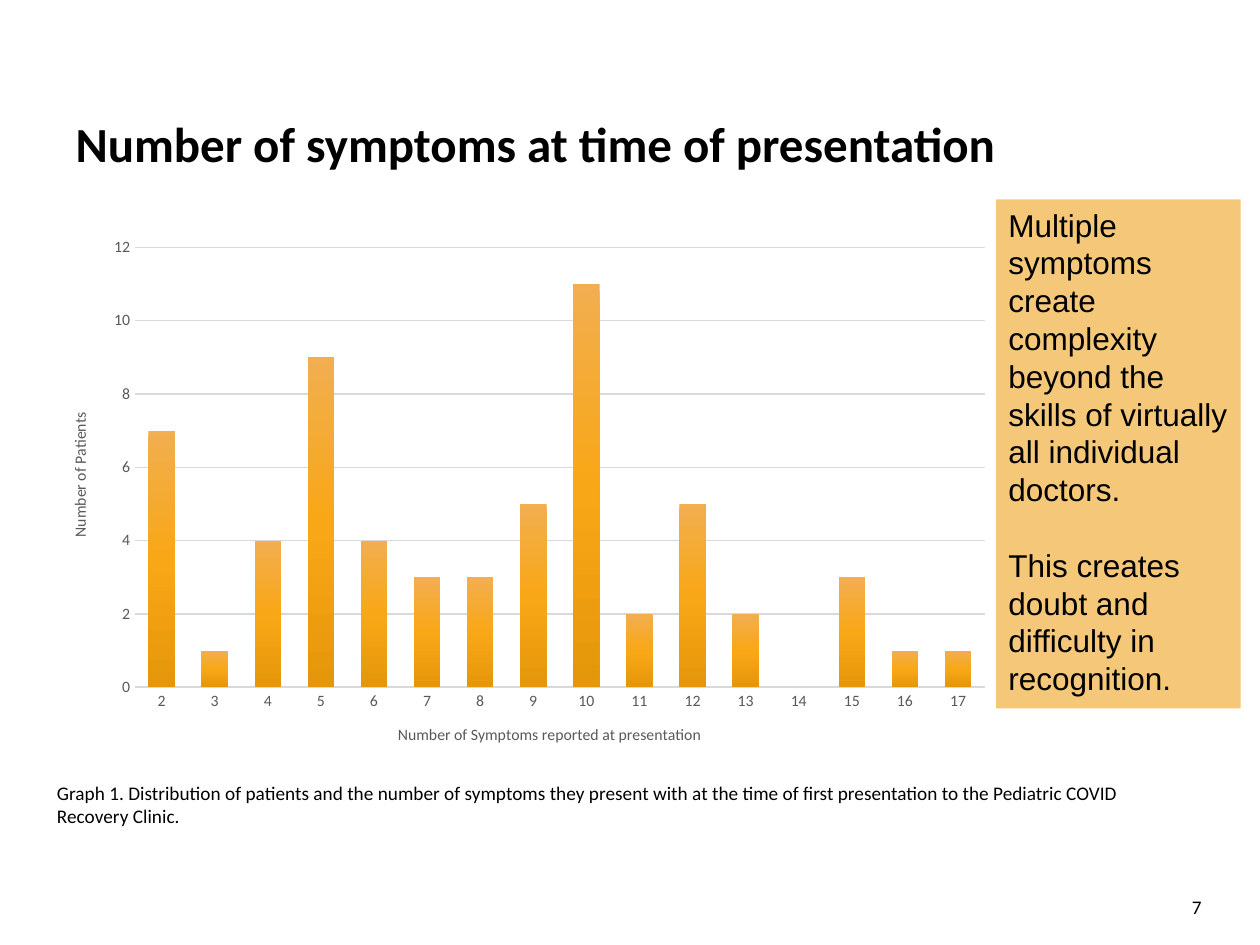
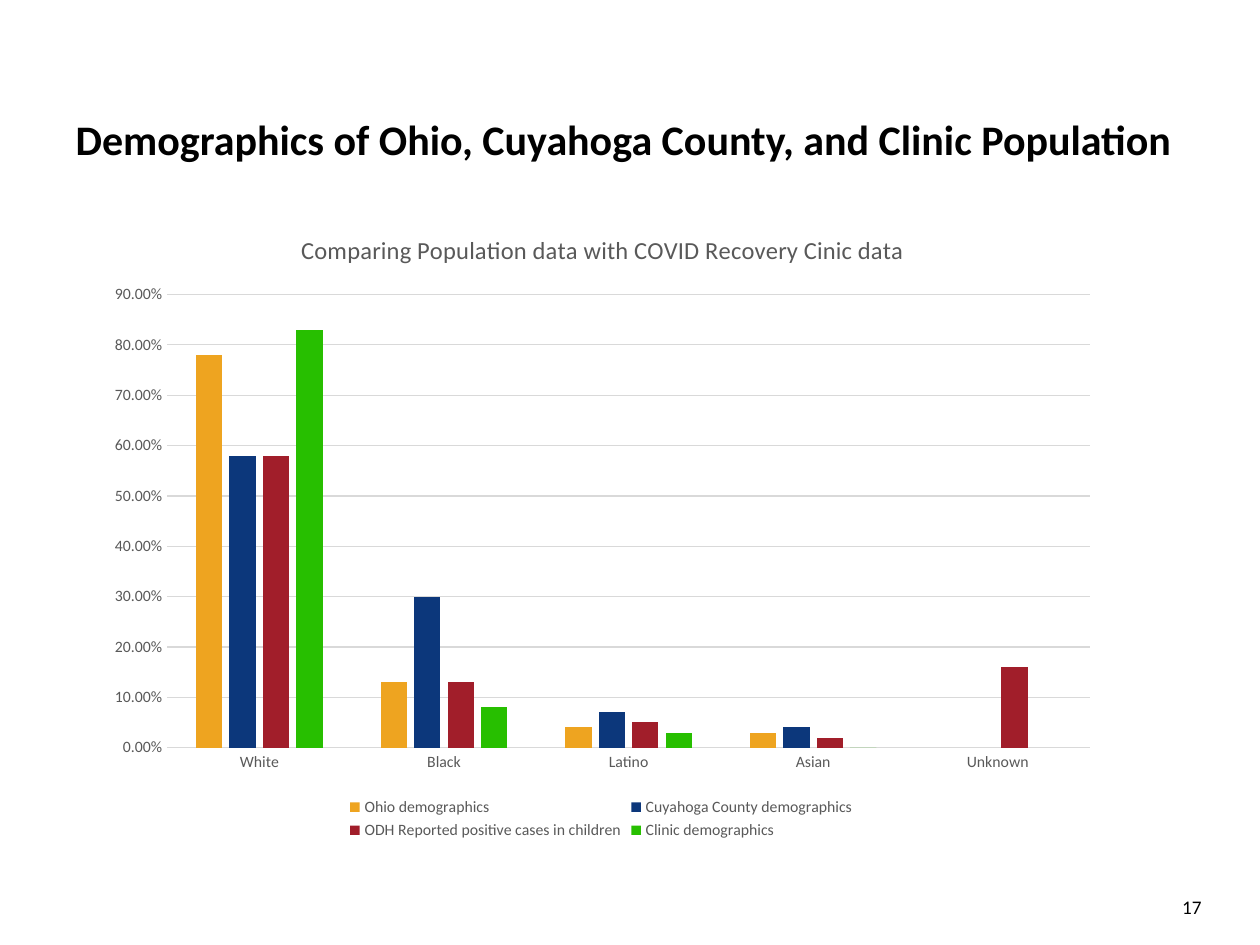
from lxml import etree
from pptx import Presentation
from pptx.chart.data import CategoryChartData
from pptx.dml.color import RGBColor
from pptx.enum.chart import XL_CHART_TYPE as ChartType, XL_LEGEND_POSITION as LegendPosition
from pptx.enum.chart import XL_TICK_MARK as TickMark
from pptx.enum.shapes import MSO_SHAPE as Shape
from pptx.enum.text import MSO_ANCHOR as Anchor, PP_ALIGN as Align
from pptx.oxml import parse_xml
from pptx.oxml.ns import nsdecls, qn
from pptx.util import Pt

COLOURS = {
    "text": "000000", "muted": "595959", "grid": "D9D9D9", "note": "F5C879",
    "ohio": "EEA420", "county": "0C377B", "reported": "A11E2A", "clinic": "27BF00",
    "bar top": "F2AE50", "bar middle": "F8A716", "bar bottom": "E5970B",
}


def set_font(font, size, colour="text", name="Calibri", bold=False):
    for key, value in {"size": Pt(size), "name": name, "bold": bold}.items():
        setattr(font, key, value)
    font.color.rgb = RGBColor.from_string(COLOURS[colour])


def place_part(element, index, chart_box, part_box):
    for old_layout in element.findall(qn("c:layout")):
        element.remove(old_layout)
    layout = parse_xml(f"<c:layout {nsdecls('c')}><c:manualLayout/></c:layout>")
    settings = {"xMode": "edge", "yMode": "edge"}
    if element.tag == qn("c:plotArea"):
        settings = {"layoutTarget": "inner", **settings}
    for key, length, whole in zip("xywh", part_box, chart_box[2:] * 2):
        settings[key] = length / whole
    for key, value in settings.items():
        etree.SubElement(layout[0], qn(f"c:{key}")).set("val", str(value))
    element.insert(index, layout)


presentation = Presentation()
presentation.slide_width, presentation.slide_height = Pt(720), Pt(540)

pages = [
    {
        "title": "Number of symptoms at time of presentation", "title size": 28, "number": "7",
        "box": (25.2, 129.6, 548, 310.3), "plot": (52, 11.8, 485.5, 251.4),
        "categories": [str(count) for count in range(2, 18)],
        "series": [("Series 1", None, [7, 1, 4, 9, 4, 3, 3, 5, 11, 2, 5, 2, 0, 3, 1, 1])],
        "bars": {"gap_width": 100, "overlap": -24, "vary_by_categories": False},
        "scale": {"minimum_scale": 0, "maximum_scale": 12, "major_unit": 2},
        "format": "General", "axis line": 1,
    },
    {
        "title": "Demographics of Ohio, Cuyahoga County, and Clinic Population",
        "title size": 24, "number": "17",
        "box": (54, 120.2, 580.3, 362.2), "plot": (41.5, 48.1, 527.4, 259),
        "categories": ["White", "Black", "Latino", "Asian", "Unknown"],
        "series": [
            ("Ohio demographics", "ohio", [0.78, 0.13, 0.04, 0.03, None]),
            ("Cuyahoga County demographics", "county", [0.58, 0.3, 0.07, 0.04, None]),
            ("ODH Reported positive cases in children", "reported",
             [0.58, 0.13, 0.05, 0.02, 0.16]),
            ("Clinic demographics", "clinic", [0.83, 0.08, 0.03, 0, None]),
        ],
        "bars": {"gap_width": 219, "overlap": -27, "vary_by_categories": False},
        "scale": {"minimum_scale": 0, "maximum_scale": 0.9, "major_unit": 0.1},
        "format": "0.00%", "axis line": 0.75,
    },
]

slides, charts = [], []
for page in pages:
    slide = presentation.slides.add_slide(presentation.slide_layouts[5])
    title = slide.shapes.title
    for key, value in {"left": 36, "top": 61.2, "width": 648, "height": 50.4}.items():
        setattr(title, key, Pt(value))
    title.text_frame.text = page["title"]
    title.text_frame.vertical_anchor = Anchor.TOP
    paragraph = title.text_frame.paragraphs[0]
    paragraph.alignment = Align.LEFT
    set_font(paragraph.font, page["title size"], bold=True)

    number = slide.shapes.add_textbox(Pt(526), Pt(508), Pt(167.8), Pt(28.8))
    number.text_frame.word_wrap = True
    number.text_frame.text = page["number"]
    paragraph = number.text_frame.paragraphs[0]
    paragraph.alignment = Align.RIGHT
    set_font(paragraph.font, 11)

    chart_data = CategoryChartData(number_format=page["format"])
    chart_data.categories = page["categories"]
    for name, colour, values in page["series"]:
        chart_data.add_series(name, values)
    chart = slide.shapes.add_chart(
        ChartType.COLUMN_CLUSTERED, *map(Pt, page["box"]), chart_data).chart
    chart.has_title = chart.has_legend = False
    set_font(chart.font, 10)
    plot = chart.plots[0]
    for key, value in page["bars"].items():
        setattr(plot, key, value)
    place_part(plot._element.getparent(), 0, page["box"], page["plot"])
    for series, (name, colour, values) in zip(plot.series, page["series"]):
        series.invert_if_negative = False
        if colour:
            series.format.fill.solid()
            series.format.fill.fore_color.rgb = RGBColor.from_string(COLOURS[colour])

    for axis in (chart.category_axis, chart.value_axis):
        axis.major_tick_mark = axis.minor_tick_mark = TickMark.NONE
        set_font(axis.tick_labels.font, 9, "muted")
    for key, value in page["scale"].items():
        setattr(chart.value_axis, key, value)
    chart.value_axis.tick_labels.number_format = page["format"]
    chart.value_axis.tick_labels.number_format_is_linked = False
    chart.value_axis.format.line.fill.background()
    for line, width in ((chart.category_axis.format.line, page["axis line"]),
                        (chart.value_axis.major_gridlines.format.line, 0.75)):
        line.color.rgb = RGBColor.from_string(COLOURS["grid"])
        line.width = Pt(width)
    slides.append(slide)
    charts.append(chart)

symptom_slide = slides[0]
symptom_chart, population_chart = charts
symptom_box, population_box = [page["box"] for page in pages]

stops = "".join(
    f'<a:gs pos="{position}"><a:srgbClr val="{COLOURS[colour]}"/></a:gs>'
    for position, colour in ((0, "bar top"), (50000, "bar middle"), (100000, "bar bottom")))
bar_properties = symptom_chart.plots[0].series[0]._element.get_or_add_spPr()
bar_properties.insert(0, parse_xml(
    f'<a:gradFill {nsdecls("a")} rotWithShape="1"><a:gsLst>{stops}</a:gsLst>'
    '<a:lin ang="5400000" scaled="0"/></a:gradFill>'))

population_chart.has_title = True
for heading, text, size, chart_box, position in (
    (symptom_chart.category_axis.axis_title,
     "Number of Symptoms reported at presentation", 9, symptom_box, (200.6, 282.6)),
    (symptom_chart.value_axis.axis_title, "Number of Patients", 9, symptom_box, (13, 104.4)),
    (population_chart.chart_title,
     "Comparing Population data with COVID Recovery Cinic data", 14,
     population_box, (115.5, 10.5)),
):
    heading.text_frame.text = text
    set_font(heading.text_frame.paragraphs[0].runs[0].font, size, "muted")
    place_part(heading._element, 1, chart_box, position)
vertical_body = symptom_chart.value_axis.axis_title.text_frame._txBody.bodyPr
vertical_body.set("rot", "-5400000")
vertical_body.set("vert", "horz")

population_chart.has_legend = True
legend = population_chart.legend
legend.position = LegendPosition.BOTTOM
legend.include_in_layout = False
set_font(legend.font, 9, "muted")
place_part(legend._element, 1, population_box, (143, 333.2, 293, 29))

caption = symptom_slide.shapes.add_textbox(Pt(25.5), Pt(442.8), Pt(621.4), Pt(33.8))
caption.text_frame.word_wrap = True
caption.text_frame.vertical_anchor = Anchor.MIDDLE
caption.text_frame.text = (
    "Graph 1. Distribution of patients and the number of symptoms they present with "
    "at the time of first presentation to the Pediatric COVID Recovery Clinic.")
set_font(caption.text_frame.paragraphs[0].font, 11)

note = symptom_slide.shapes.add_shape(
    Shape.RECTANGLE, Pt(569.2), Pt(114), Pt(139.8), Pt(290.9))
note.shadow.inherit = False
note.fill.solid()
note.fill.fore_color.rgb = RGBColor.from_string(COLOURS["note"])
note.line.fill.background()
note.text_frame.word_wrap = True
note.text_frame.vertical_anchor = Anchor.TOP
note.text_frame.text = (
    "Multiple symptoms create complexity beyond the skills of virtually all individual doctors.\n"
    "This creates doubt and difficulty in recognition.")
for paragraph in note.text_frame.paragraphs:
    paragraph.alignment = Align.LEFT
    set_font(paragraph.font, 18, name="Arial")
note.text_frame.paragraphs[1].space_before = Pt(21.6)

presentation.save("out.pptx")
